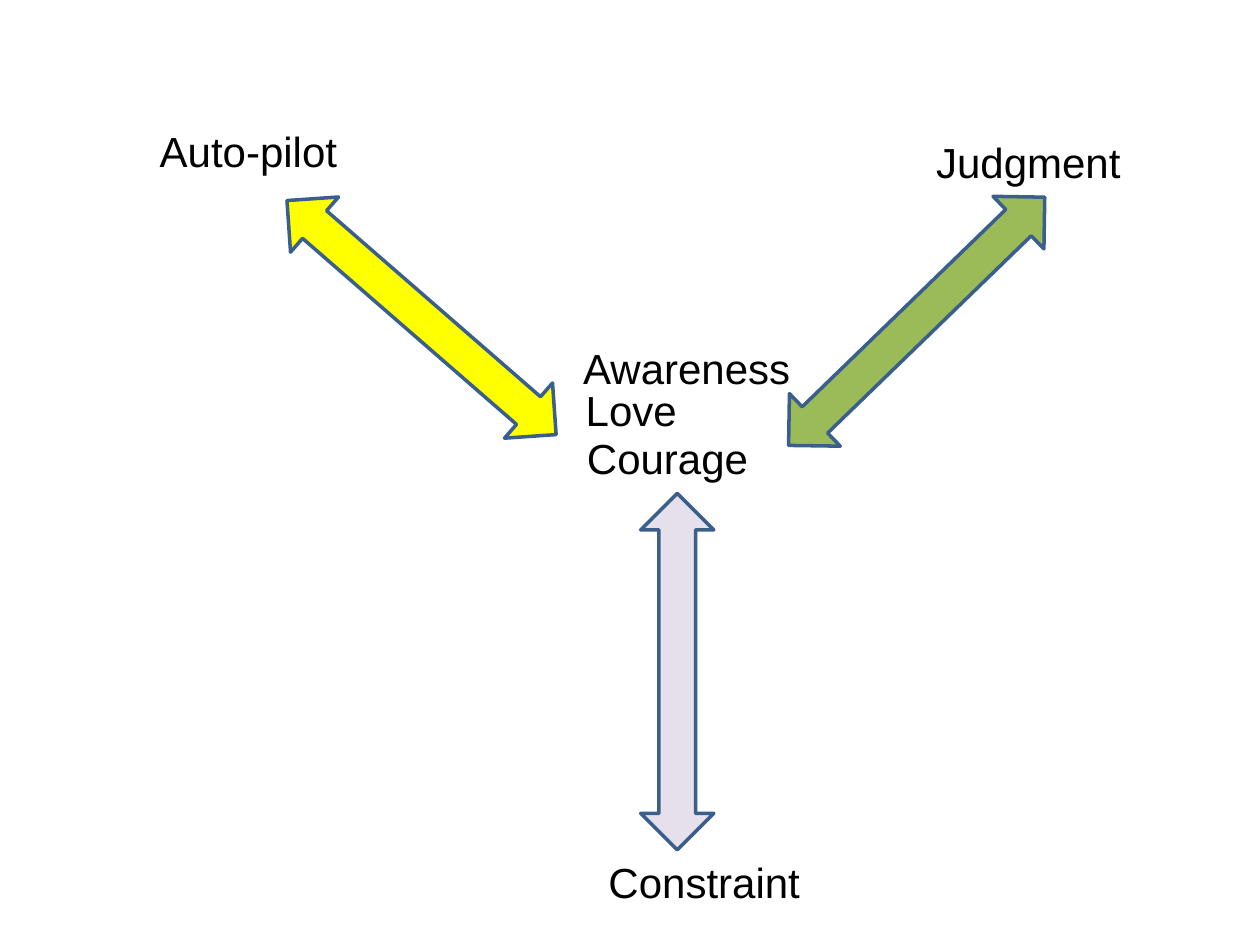
from pptx import Presentation
from pptx.dml.color import RGBColor
from pptx.enum.shapes import MSO_SHAPE
from pptx.enum.text import MSO_AUTO_SIZE
from pptx.util import Pt

DOUBLE_ARROW = MSO_SHAPE.LEFT_RIGHT_ARROW
GROW = MSO_AUTO_SIZE.SHAPE_TO_FIT_TEXT

# Content: arrows as (left, top, rotation, fill), labels as (text, left, top, width)
ARROWS = [
    (139, 160.6, 41, "FFFF00"),
    (421.9, 162.7, 135.9, "9BBB59"),
    (285.1, 362.9, 270, "E6E0EC"),
]
LABELS = [
    ("Auto-pilot", 84.2, 68.4, 156.2),
    ("Awareness", 326.2, 192.2, 153.4),
    ("Judgment", 527.8, 74.2, 174.2),
    ("Love", 327.6, 216, 174.2),
    ("Courage", 328.3, 243.4, 174.2),
    ("Constraint", 340.6, 486, 174.2),
]
ARROW_LENGTH, ARROW_THICKNESS = 203.8, 41.8
LABEL_HEIGHT = 36


def color(value):
    return RGBColor.from_string(value)


def add_arrow(slide, left, top, rotation, fill):
    shape = slide.shapes.add_shape(
        DOUBLE_ARROW, Pt(left), Pt(top), Pt(ARROW_LENGTH), Pt(ARROW_THICKNESS))
    shape.rotation = rotation
    shape.shadow.inherit = False
    shape.fill.solid()
    shape.fill.fore_color.rgb = color(fill)
    shape.line.color.rgb = color("3A5F8C")
    shape.line.width = Pt(2)


def add_text(slide, text, left, top, width, size=24, font="Arial", fill="000000"):
    box = slide.shapes.add_textbox(Pt(left), Pt(top), Pt(width), Pt(LABEL_HEIGHT))
    frame = box.text_frame
    frame.word_wrap = True
    frame.auto_size = GROW
    run = frame.paragraphs[0].add_run()
    run.text = text
    run.font.size = Pt(size)
    run.font.name = font
    run.font.color.rgb = color(fill)


presentation = Presentation()
presentation.slide_width, presentation.slide_height = Pt(720), Pt(540)
slide = presentation.slides.add_slide(presentation.slide_layouts[6])

# Arrows between the centre and the three outer ideas
for arrow in ARROWS:
    add_arrow(slide, *arrow)

# Labels
for label in LABELS:
    add_text(slide, *label)

presentation.save("out.pptx")
